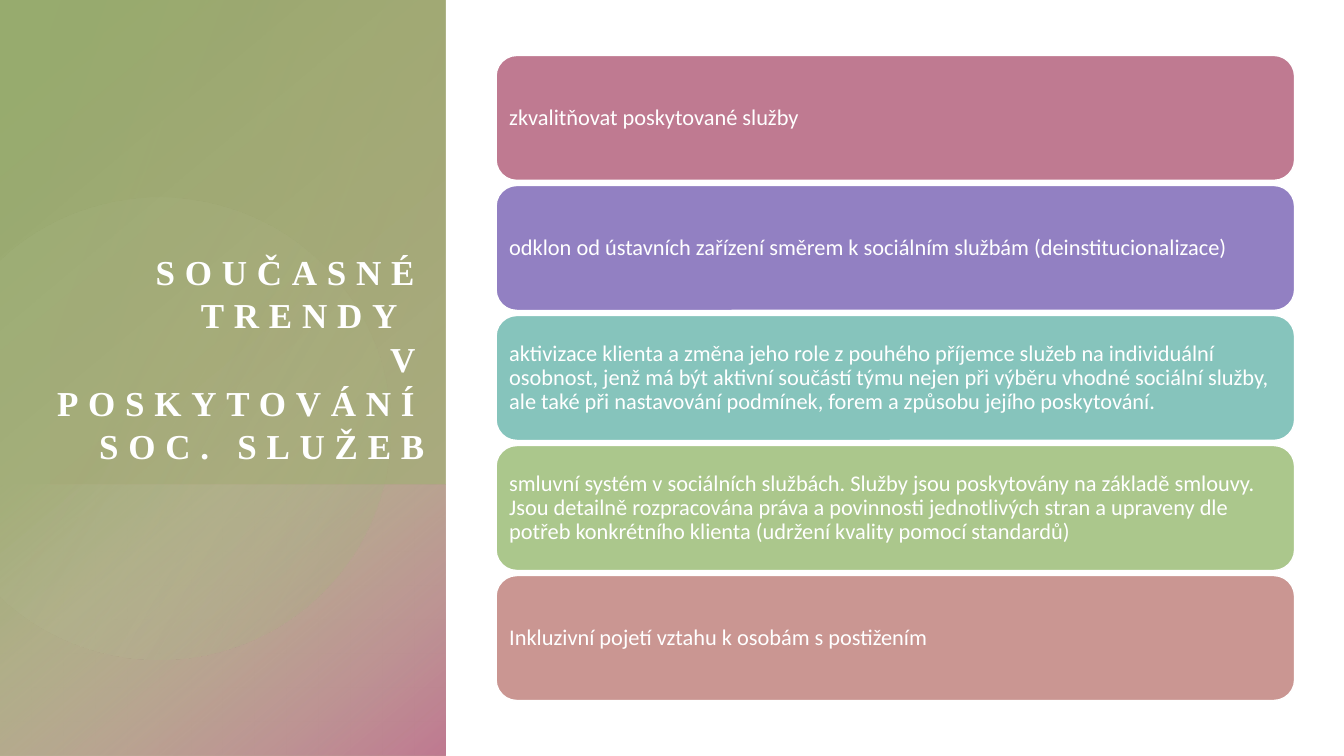
from math import acos, cos, pi, sin

from lxml.etree import SubElement
from pptx import Presentation
from pptx.dml.color import RGBColor
from pptx.enum.shapes import MSO_SHAPE as Shape
from pptx.enum.text import MSO_ANCHOR as Anchor, PP_ALIGN as Align
from pptx.oxml.ns import qn
from pptx.util import Inches, Pt

WHITE = RGBColor(0xFF, 0xFF, 0xFF)
ROSE = RGBColor(0xBF, 0x7A, 0x91)
VIOLET = RGBColor(0x92, 0x80, 0xC2)
TEAL = RGBColor(0x86, 0xC4, 0xBC)
LIGHT_GREEN = RGBColor(0xAB, 0xC7, 0x8C)
SALMON = RGBColor(0xCA, 0x96, 0x92)
GREEN = RGBColor(0x97, 0xAB, 0x6E)
PALE_GREEN = RGBColor(0xC1, 0xCD, 0xA8)
OLIVE = RGBColor(0xA9, 0xA5, 0x7A)
SAND = RGBColor(0xCB, 0xC9, 0xAF)
TAN = RGBColor(0xBF, 0x9C, 0x7A)

TITLE = "SOUČASNÉ TRENDY \vV POSKYTOVÁNÍ SOC. SLUŽEB"
TRENDS = [
    ("zkvalitňovat poskytované služby", ROSE),
    ("odklon od ústavních zařízení směrem k sociálním službám "
     "(deinstitucionalizace)", VIOLET),
    ("aktivizace klienta a změna jeho role z pouhého příjemce služeb na "
     "individuální osobnost, jenž má být aktivní součástí týmu nejen při "
     "výběru vhodné sociální služby, ale také při nastavování podmínek, "
     "forem a způsobu jejího poskytování.", TEAL),
    ("smluvní systém v sociálních službách. Služby jsou poskytovány na "
     "základě smlouvy. Jsou detailně rozpracována práva a povinnosti "
     "jednotlivých stran a upraveny dle potřeb konkrétního klienta "
     "(udržení kvality pomocí standardů)", LIGHT_GREEN),
    ("Inkluzivní pojetí vztahu k osobám s postižením", SALMON),
]

WIDTH, HEIGHT = 13.33, 7.5
PANEL_WIDTH = 4.42
GLOW_TOP = 4.81
CARD_LEFT, CARD_TOP, CARD_WIDTH, CARD_HEIGHT = 4.92, 0.55, 7.92, 1.24
CARD_STEP = 1.29
CIRCLE_X, CIRCLE_Y, CIRCLE_RADIUS = 1.58, 4.25, 2.29
ARC_STEPS = 90

# Gradients: angle in degrees clockwise, then (position %, colour, opacity %).
PANEL_GRADIENT = (50, [(8, GREEN, 100), (100, OLIVE, 89)])
GLOW_GRADIENT = (50, [(0, SAND, 0), (99, ROSE, 100)])
CIRCLE_GRADIENT = (30, [(36, PALE_GREEN, 6), (100, GREEN, 26)])
VEIL_GRADIENT = (200, [(0, OLIVE, 29), (100, TAN, 0)])


def fill_gradient(shape, gradient):
    """Fill with a linear gradient whose stops carry their own opacity."""
    angle, stops = gradient
    shape.shadow.inherit = False
    shape.line.fill.background()
    shape.fill.gradient()
    fill = shape._element.spPr.find(qn("a:gradFill"))
    for child in list(fill):
        fill.remove(child)
    stop_list = SubElement(fill, qn("a:gsLst"))
    for position, color, opacity in stops:
        stop = SubElement(stop_list, qn("a:gs"), pos=str(position * 1000))
        tint = SubElement(stop, qn("a:srgbClr"), val=str(color))
        SubElement(tint, qn("a:alpha"), val=str(opacity * 1000))
    SubElement(fill, qn("a:lin"), ang=str(angle * 60000), scaled="0")


def add_box(slide, kind, *box):
    return slide.shapes.add_shape(kind, *map(Inches, box))


def add_circle(slide):
    """Draw the part of the circle that lies right of the slide's left edge."""
    reach = acos(-CIRCLE_X / CIRCLE_RADIUS)
    angles = [-reach + 2 * reach * step / ARC_STEPS
              for step in range(ARC_STEPS + 1)]
    points = [(Inches(CIRCLE_X + CIRCLE_RADIUS * cos(angle)),
               Inches(CIRCLE_Y + CIRCLE_RADIUS * sin(angle)))
              for angle in angles]
    builder = slide.shapes.build_freeform(*points[0])
    builder.add_line_segments(points[1:], close=True)
    return builder.convert_to_shape()


def write_text(shape, text, inset, anchor, align, spacing, font_format):
    frame = shape.text_frame
    frame.word_wrap = True
    frame.vertical_anchor = anchor
    for side in ("left", "top", "right", "bottom"):
        setattr(frame, f"margin_{side}", Inches(inset))
    paragraph = frame.paragraphs[0]
    paragraph.text = text
    paragraph.alignment = align
    paragraph.line_spacing = spacing
    for run in paragraph.runs:
        run.font.color.rgb = WHITE
        for name, value in font_format.items():
            setattr(run.font, name, value)
    return paragraph


def add_panel(slide):
    panel = add_box(slide, Shape.RECTANGLE, 0, 0, PANEL_WIDTH, HEIGHT)
    fill_gradient(panel, PANEL_GRADIENT)
    glow = add_box(slide, Shape.RECTANGLE, 0, GLOW_TOP,
                   PANEL_WIDTH, HEIGHT - GLOW_TOP)
    fill_gradient(glow, GLOW_GRADIENT)
    fill_gradient(add_circle(slide), CIRCLE_GRADIENT)
    veil = add_box(slide, Shape.RECTANGLE, 0.5, 0, PANEL_WIDTH - 0.5, GLOW_TOP)
    fill_gradient(veil, VEIL_GRADIENT)


def add_title(slide):
    box = slide.shapes.add_textbox(*map(Inches, (0.5, 0.95, 3.71, 3.68)))
    paragraph = write_text(
        box, TITLE, 0, Anchor.BOTTOM, Align.RIGHT, 1.04,
        {"name": "Times New Roman", "size": Pt(25), "bold": True})
    for run in paragraph.runs:
        run._r.get_or_add_rPr().set("spc", "700")


def add_cards(slide):
    for row, (text, color) in enumerate(TRENDS):
        card = add_box(slide, Shape.ROUNDED_RECTANGLE, CARD_LEFT,
                       CARD_TOP + row * CARD_STEP, CARD_WIDTH, CARD_HEIGHT)
        card.shadow.inherit = False
        card.fill.solid()
        card.fill.fore_color.rgb = color
        card.line.color.rgb = WHITE
        card.line.width = Pt(1)
        write_text(card, text, 0.07, Anchor.MIDDLE, Align.LEFT, 0.9,
                   {"name": "Calibri", "size": Pt(16)})


def main():
    presentation = Presentation()
    presentation.slide_width = Inches(WIDTH)
    presentation.slide_height = Inches(HEIGHT)
    slide = presentation.slides.add_slide(presentation.slide_layouts[6])
    add_panel(slide)
    add_title(slide)
    add_cards(slide)
    presentation.save("out.pptx")


if __name__ == "__main__":
    main()
